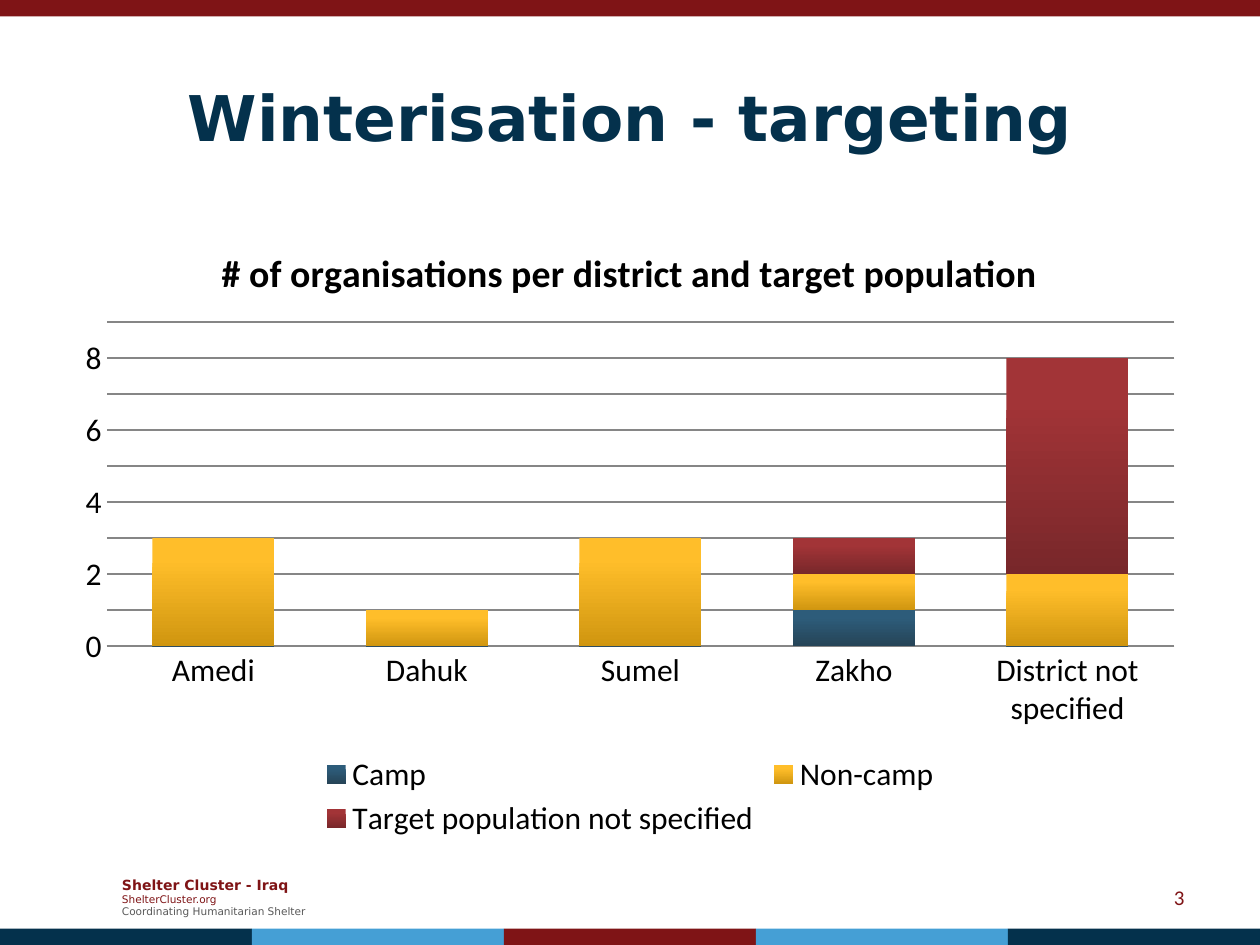
from lxml import etree
from pptx import Presentation
from pptx.chart.data import CategoryChartData
from pptx.dml.color import RGBColor
from pptx.enum import chart as charts, shapes, text
from pptx.util import Inches, Pt

NAVY = RGBColor(0x04, 0x31, 0x4C)
SKY = RGBColor(0x45, 0x9F, 0xD5)
MAROON = RGBColor(0x7F, 0x14, 0x16)
GREY = RGBColor(0x59, 0x59, 0x59)
GRID = RGBColor(0x86, 0x86, 0x86)
BLACK = RGBColor(0, 0, 0)

DISTRICTS = ["Amedi", "Dahuk", "Sumel", "Zakho", "District not specified"]
# Population, organisations per district, top and bottom colour of the bars
POPULATIONS = [
    ("Camp", [0, 0, 0, 1, 0],
     RGBColor(0x2D, 0x5C, 0x7A), RGBColor(0x26, 0x44, 0x57)),
    ("Non-camp", [3, 1, 3, 1, 2],
     RGBColor(0xFF, 0xBE, 0x2A), RGBColor(0xD0, 0x96, 0x10)),
    ("Target population not specified", [0, 0, 0, 1, 6],
     RGBColor(0xA2, 0x34, 0x37), RGBColor(0x78, 0x27, 0x2A)),
]


def set_font(font, color, **values):
    for name, value in values.items():
        setattr(font, name, value)
    font.color.rgb = color


def add_band(slide, left, top, width, color):
    band = slide.shapes.add_shape(
        shapes.MSO_SHAPE.RECTANGLE,
        Inches(left), Inches(top), Inches(width), Inches(0.13))
    band.shadow.inherit = False
    band.fill.solid()
    band.fill.fore_color.rgb = color
    band.line.fill.background()


def add_text(slide, box, lines, alignment):
    """Each line is its wording, its colour and its font values."""
    shape = slide.shapes.add_textbox(*map(Inches, box))
    frame = shape.text_frame
    frame.word_wrap = True
    frame.vertical_anchor = text.MSO_ANCHOR.MIDDLE
    for index, (wording, color, values) in enumerate(lines):
        paragraph = frame.add_paragraph() if index else frame.paragraphs[0]
        paragraph.alignment = alignment
        run = paragraph.add_run()
        run.text = wording
        set_font(run.font, color, **values)


def fill_gradient(fill, top_color, bottom_color):
    fill.gradient()
    fill.gradient_angle = 270
    stops = zip(fill.gradient_stops, (0.2, 1), (top_color, bottom_color))
    for stop, position, color in stops:
        stop.position = position
        stop.color.rgb = color


def add_population_chart(slide):
    data = CategoryChartData()
    data.categories = DISTRICTS
    for name, values, *_ in POPULATIONS:
        data.add_series(name, values)
    chart = slide.shapes.add_chart(
        charts.XL_CHART_TYPE.COLUMN_STACKED,
        Inches(0.5), Inches(1.75), Inches(9), Inches(4.95), data).chart
    set_font(chart.font, BLACK, name="Calibri", size=Pt(18))

    # Title and legend
    chart.has_title = True
    title = chart.chart_title.text_frame
    title.text = "# of organisations per district and target population"
    set_font(title.paragraphs[0].runs[0].font, BLACK,
             name="Calibri", size=Pt(21.6), bold=True)
    chart.has_legend = True
    chart.legend.position = charts.XL_LEGEND_POSITION.BOTTOM
    chart.legend.include_in_layout = False

    # Axes
    for axis in (chart.category_axis, chart.value_axis):
        axis.major_tick_mark = charts.XL_TICK_MARK.NONE
        axis.minor_tick_mark = charts.XL_TICK_MARK.NONE
    chart.category_axis.format.line.color.rgb = GRID
    value_axis = chart.value_axis
    scale = {"minimum_scale": 0, "maximum_scale": 9, "major_unit": 1,
             "has_major_gridlines": True}
    for name, value in scale.items():
        setattr(value_axis, name, value)
    value_axis.major_gridlines.format.line.color.rgb = GRID
    value_axis.format.line.fill.background()

    # Bars
    plot = chart.plots[0]
    plot.vary_by_categories = False
    plot.gap_width = 75
    plot.overlap = 100
    for series, (_, _, top_color, bottom_color) in zip(plot.series, POPULATIONS):
        fill_gradient(series.format.fill, top_color, bottom_color)


def main():
    presentation = Presentation()
    presentation.slide_width = Inches(10)
    presentation.slide_height = Inches(7.5)
    slide = presentation.slides.add_slide(presentation.slide_layouts[6])

    # Footer
    small = {"name": "DejaVu Sans", "size": Pt(6)}
    add_text(slide, (0.87, 6.9, 1.73, 0.44), [
        ("Shelter Cluster - Iraq", MAROON,
         {"name": "DejaVu Sans", "size": Pt(8), "bold": True}),
        ("ShelterCluster.org", MAROON, small),
        ("Coordinating Humanitarian Shelter", GREY, small),
    ], text.PP_ALIGN.LEFT)

    # Coloured bands at the top and bottom edges
    add_band(slide, 0, 0, 10, MAROON)
    for index, color in enumerate((NAVY, SKY, MAROON, SKY, NAVY)):
        add_band(slide, index * 2, 7.37, 2, color)

    # Title, chart and slide number
    add_text(slide, (0.5, 0.3, 9, 1.25), [
        ("Winterisation - targeting", NAVY,
         {"name": "DejaVu Sans", "size": Pt(36), "bold": True}),
    ], text.PP_ALIGN.CENTER)
    add_population_chart(slide)
    add_text(slide, (7.17, 6.92, 2.33, 0.4), [
        ("3", MAROON, {"name": "Calibri", "size": Pt(12)}),
    ], text.PP_ALIGN.RIGHT)

    presentation.save("out.pptx")


if __name__ == "__main__":
    main()
